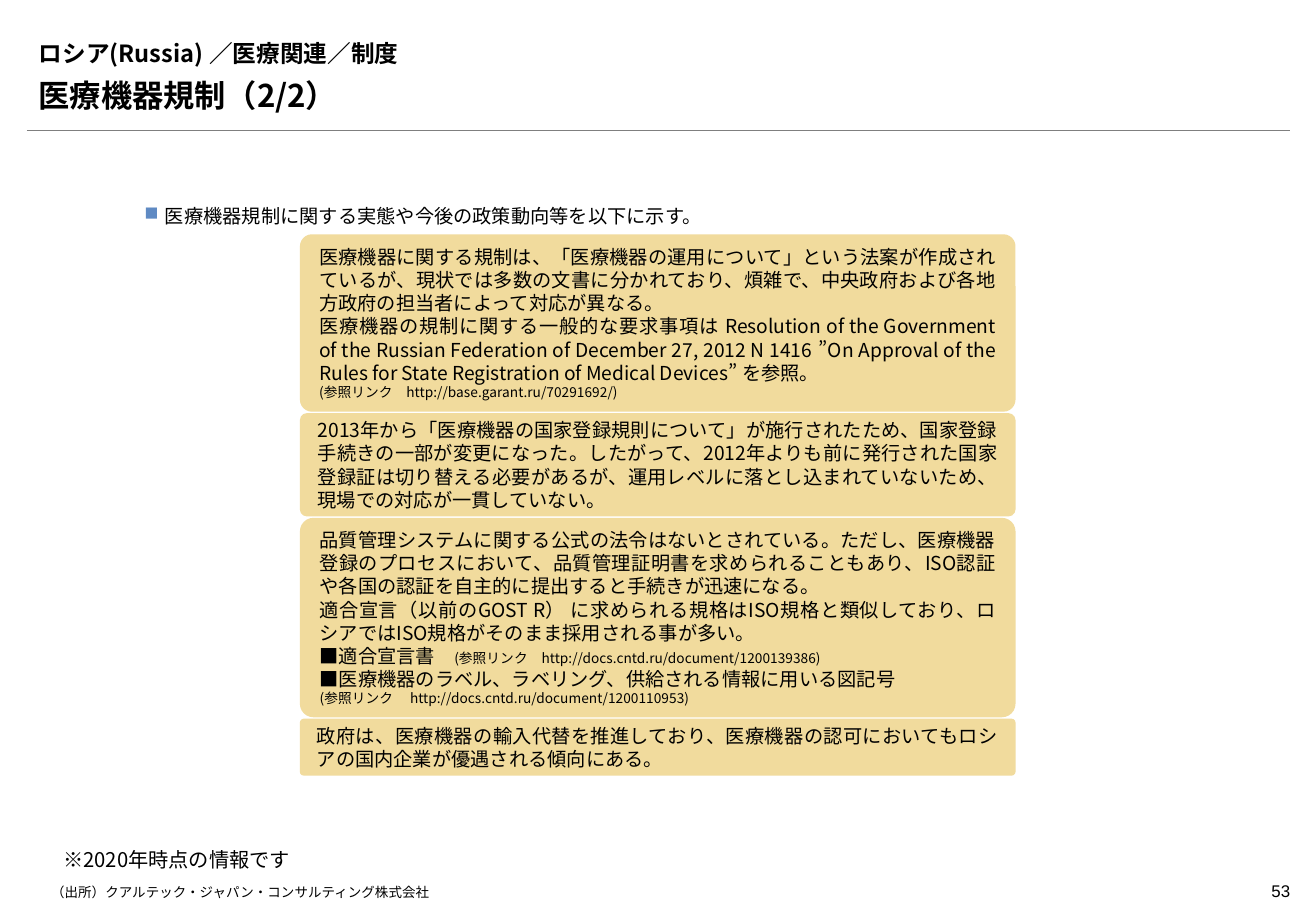
from dataclasses import dataclass
from lxml.etree import SubElement
from pptx import Presentation
from pptx.dml.color import RGBColor
from pptx.enum.lang import MSO_LANGUAGE_ID
from pptx.enum.shapes import MSO_CONNECTOR, MSO_SHAPE
from pptx.enum.text import MSO_ANCHOR, PP_ALIGN
from pptx.oxml.ns import qn
from pptx.util import Cm, Pt


@dataclass(frozen=True)
class Theme:
    """Colours, fonts and type sizes of the slide."""
    ink: RGBColor = RGBColor(0, 0, 0)
    rule: RGBColor = RGBColor(0x7F, 0x7F, 0x7F)
    panel: RGBColor = RGBColor(0xF1, 0xDB, 0x9D)
    bullet: str = "5F8AC3"
    font: str = "Noto Sans CJK JP"
    number_font: str = "Arial"
    title: float = 14
    subtitle: float = 18.5
    body: float = 11.4
    link: float = 8.1
    note: float = 12
    source: float = 8
    number: float = 10


T = Theme()
J, L = PP_ALIGN.JUSTIFY, PP_ALIGN.LEFT

PANELS = [
    (3.71, [
        (J, [("医療機器に関する規制は、「医療機器の運用について」という法案が作成されているが、現状では多数の文書に分かれており、煩雑で、中央政府および各地方政府の担当者によって対応が異なる。", T.body)]),
        (J, [("医療機器の規制に関する一般的な要求事項は Resolution of the Government of the Russian Federation of December 27, 2012 N 1416 ”On Approval of the Rules for State Registration of Medical Devices” を参照。", T.body)]),
        (J, [("(参照リンク　http://base.garant.ru/70291692/)", T.link)]),
    ]),
    (2.16, [
        (J, [("2013年から「医療機器の国家登録規則について」が施行されたため、国家登録手続きの一部が変更になった。したがって、2012年よりも前に発行された国家登録証は切り替える必要があるが、運用レベルに落とし込まれていないため、現場での対応が一貫していない。", T.body)]),
    ]),
    (4.17, [
        (J, [("品質管理システムに関する公式の法令はないとされている。ただし、医療機器登録のプロセスにおいて、品質管理証明書を求められることもあり、ISO認証や各国の認証を自主的に提出すると手続きが迅速になる。", T.body)]),
        (J, [("適合宣言（以前のGOST R） に求められる規格はISO規格と類似しており、ロシアではISO規格がそのまま採用される事が多い。", T.body)]),
        (L, [("■適合宣言書　", T.body), ("(参照リンク　http://docs.cntd.ru/document/1200139386)", T.link)]),
        (L, [("■医療機器のラベル、ラベリング、供給される情報に用いる図記号", T.body)]),
        (L, [("(参照リンク 　http://docs.cntd.ru/document/1200110953)", T.link)]),
    ]),
    (1.19, [
        (J, [("政府は、医療機器の輸入代替を推進しており、医療機器の認可においてもロシアの国内企業が優遇される傾向にある。", T.body)]),
    ]),
]


def set_font(p, size, bold=False, name=T.font):
    """Set the Latin and East Asian type of a paragraph."""
    f = p.font
    f.name, f.size, f.bold = name, Pt(size), bold
    f.color.rgb = T.ink
    f.language_id = MSO_LANGUAGE_ID.JAPANESE
    rPr = p._p.pPr.find(qn("a:defRPr"))
    SubElement(rPr, qn("a:ea")).set("typeface", name)


def set_frame(tf, anchor, dx=0.25, dy=0.13):
    """Set wrapping, anchor and insets of a text frame."""
    tf.word_wrap = True
    tf.vertical_anchor = anchor
    tf.margin_left = tf.margin_right = Cm(dx)
    tf.margin_top = tf.margin_bottom = Cm(dy)


def add_text(s, box, text, size, anchor=MSO_ANCHOR.TOP, inset=(0.25, 0.13),
             align=L, bold=False, name=T.font):
    """Add a one-paragraph text box and return its paragraph."""
    tf = s.shapes.add_textbox(*map(Cm, box)).text_frame
    set_frame(tf, anchor, *inset)
    p = tf.paragraphs[0]
    p.text, p.alignment = text, align
    set_font(p, size, bold, name)
    return p


def add_header(s, x, y, w):
    """Place the title, the subtitle and the rule beneath them."""
    sp = s.shapes.title
    sp.left, sp.top, sp.width, sp.height = map(Cm, (x, y, w, 1))
    set_frame(sp.text_frame, MSO_ANCHOR.BOTTOM)
    p = sp.text_frame.paragraphs[0]
    p.text, p.alignment = "ロシア(Russia) ／医療関連／制度", L
    set_font(p, T.title, bold=True)
    p = add_text(s, (x, y + 1, w, 1), "医療機器規制（2/2）", T.subtitle,
                 MSO_ANCHOR.BOTTOM, bold=True)
    p.line_spacing = 0.9
    ends = (x, y + 2.19, x + w, y + 2.19)
    line = s.shapes.add_connector(MSO_CONNECTOR.STRAIGHT, *map(Cm, ends))
    line.line.color.rgb, line.line.width = T.rule, Pt(0.25)
    SubElement(line._element.spPr, qn("a:effectLst"))


def add_lead(s, x, y, w):
    """Place the bulleted lead sentence."""
    p = add_text(s, (x, y, w, 0.48), "医療機器規制に関する実態や今後の政策動向等を以下に示す。",
                 T.body, inset=(0, 0), align=J)
    pPr = p._p.get_or_add_pPr()
    pPr.set("marL", str(Cm(0.43)))
    pPr.set("indent", str(-Cm(0.43)))
    color, char = (pPr.makeelement(qn(tag)) for tag in ("a:buClr", "a:buChar"))
    SubElement(color, qn("a:srgbClr")).set("val", T.bullet)
    char.set("char", "■")
    for el in (color, char):
        pPr.find(qn("a:defRPr")).addprevious(el)
    p.line_spacing, p.space_after = 1.1, Pt(1.6)


def add_panel(s, box, paragraphs):
    """Place one rounded panel with its paragraphs."""
    sp = s.shapes.add_shape(MSO_SHAPE.ROUNDED_RECTANGLE, *map(Cm, box))
    sp.adjustments[0] = 0.068
    sp.shadow.inherit = False
    sp.fill.solid()
    sp.fill.fore_color.rgb = T.panel
    sp.line.fill.background()
    tf = sp.text_frame
    set_frame(tf, MSO_ANCHOR.MIDDLE, 0.33)
    for i, (align, runs) in enumerate(paragraphs):
        p = tf.add_paragraph() if i else tf.paragraphs[0]
        p.alignment = align
        set_font(p, runs[0][1])
        for text, size in runs:
            r = p.add_run()
            r.text = text
            if size != runs[0][1]:
                r.font.size = Pt(size)


def add_panels(s, x, y, w, gap=0.03):
    """Stack the panels downwards with equal gaps."""
    for h, paragraphs in PANELS:
        add_panel(s, (x, y, w, h), paragraphs)
        y += h + gap


def add_footer(s, x, y, w):
    """Place the note, the source and the page number."""
    add_text(s, (x, y, 6.2, 0.76), "※2020年時点の情報です", T.note)
    add_text(s, (x, y + 0.91, 24, 0.41), "（出所）クアルテック・ジャパン・コンサルティング株式会社",
             T.source, inset=(0, 0))
    add_text(s, (x + w - 2, y + 0.71, 2, 0.69), "53", T.number,
             inset=(0, 0.13), align=PP_ALIGN.RIGHT, name=T.number_font)


def main():
    """Build and save the slide."""
    prs = Presentation()
    prs.slide_width, prs.slide_height = Cm(27.51), Cm(19.05)
    s = prs.slides.add_slide(prs.slide_layouts[5])
    add_header(s, 0.56, 0.53, 26.4)
    add_panels(s, 6.27, 4.9, 14.96)
    add_lead(s, 3.02, 4.22, 21.46)
    add_footer(s, 1.07, 17.58, 25.9)
    prs.save("out.pptx")


if __name__ == "__main__":
    main()
